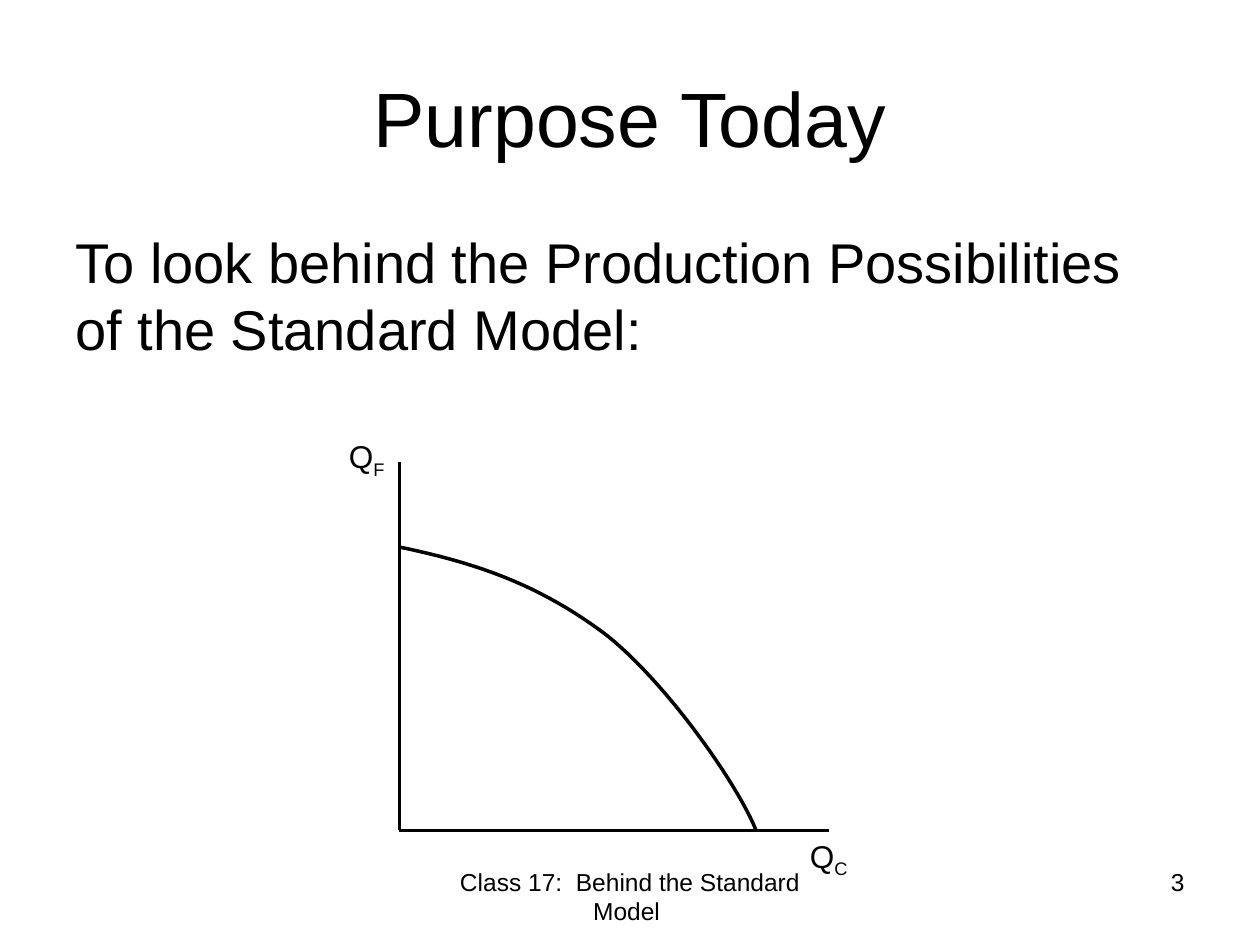
from lxml import etree
from pptx import Presentation, util as u
from pptx.dml.color import RGBColor
from pptx.enum import shapes, text
from pptx.oxml import ns

W, H = 10, 7.5
INK = "000000"
AL = text.PP_ALIGN


def color(hex_string):
    """Turn a hex string into a colour."""
    return RGBColor.from_string(hex_string)


def add_text(s, words, box, size=18, align=AL.LEFT, sub=None, middle=False, before=0):
    """Place one paragraph, with an optional subscript, in a box of inches."""
    tf = s.shapes.add_textbox(*map(u.Inches, box)).text_frame
    tf.word_wrap = True
    tf.vertical_anchor = text.MSO_ANCHOR.MIDDLE if middle else text.MSO_ANCHOR.TOP
    p = tf.paragraphs[0]
    p.alignment, p.space_before = align, u.Pt(before)
    for part in filter(None, (words, sub)):
        r = p.add_run()
        r.text = part
        r.font.name, r.font.size = "Arial", u.Pt(size)
        r.font.color.rgb = color(INK)
    if sub:
        r.font._element.set("baseline", "-25000")


def style_line(sp):
    """Give a line or outline the diagram's stroke."""
    sp.line.color.rgb = color(INK)
    sp.line.width = u.Pt(2)


def add_axis(s, start, end):
    """Draw a straight axis between two points."""
    sp = s.shapes.add_connector(shapes.MSO_CONNECTOR.STRAIGHT, *map(u.Inches, start + end))
    style_line(sp)
    etree.SubElement(sp._element.spPr, ns.qn("a:effectLst"))


def bezier(points, steps=24):
    """List points along a cubic curve, leaving out its start."""
    weights = [((1 - t) ** 3, 3 * t * (1 - t) ** 2, 3 * t * t * (1 - t), t ** 3)
               for t in (i / steps for i in range(1, steps + 1))]
    return [tuple(sum(w * p[k] for w, p in zip(ws, points)) for k in (0, 1))
            for ws in weights]


def add_frontier(s, box):
    """Draw the bowed production frontier across a box."""
    x, y, w, h = box
    shares = [(0, 0), (0.23, 0.06), (0.4, 0.14), (0.58, 0.31),
              (0.75, 0.48), (0.95, 0.84), (1, 1)]
    pts = [(u.Inches(x + a * w), u.Inches(y + b * h)) for a, b in shares]
    fb = s.shapes.build_freeform(*pts[0])
    fb.add_line_segments(bezier(pts[:4]) + bezier(pts[3:]), close=False)
    sp = fb.convert_to_shape()
    sp.shadow.inherit = False
    sp.fill.background()
    style_line(sp)


def add_heading(s, box):
    """Place the title and the statement in a box."""
    x, y, w, h = box
    add_text(s, "Purpose Today", (x, y, w, 0.195 * h), 44, AL.CENTER, middle=True)
    add_text(s, "To look behind the Production Possibilities of the Standard Model:",
             (x, y + 0.227 * h, w, 0.773 * h), 32, before=6)


def add_diagram(s, box):
    """Draw the axes, their labels and the frontier in a box."""
    x, y, w, h = box
    base = y + h
    add_axis(s, (x, base), (x + w, base))
    add_axis(s, (x, base), (x, y))
    add_text(s, "Q", (x + w - 0.25, base, 0.75, 0.71), sub="C")
    add_text(s, "Q", (x - 0.5, y - 0.25, 0.75, 0.71), sub="F")
    add_frontier(s, (x, base - 0.77 * h, 0.83 * w, 0.77 * h))


def add_footer(s, box):
    """Place the class name and the page number in a box."""
    x, y, w, h = box
    add_text(s, "3", (x + 0.74 * w, y, 0.26 * w, h), 14, AL.RIGHT)
    add_text(s, "Class 17:  Behind the Standard Model ",
             (x + 0.324 * w, y, 0.352 * w, h), 14, AL.CENTER)


def main():
    """Build and save the slide."""
    prs = Presentation()
    prs.slide_width, prs.slide_height = u.Inches(W), u.Inches(H)
    s = prs.slides.add_slide(prs.slide_layouts[6])
    margin, inner = 0.05 * W, 0.9 * W
    add_heading(s, (margin, 0.04 * H, inner, 6.4))
    add_footer(s, (margin, 6.83, inner, 0.07 * H))
    add_diagram(s, (3.17, 3.67, 3.41, 2.92))
    prs.save("out.pptx")


if __name__ == "__main__":
    main()
